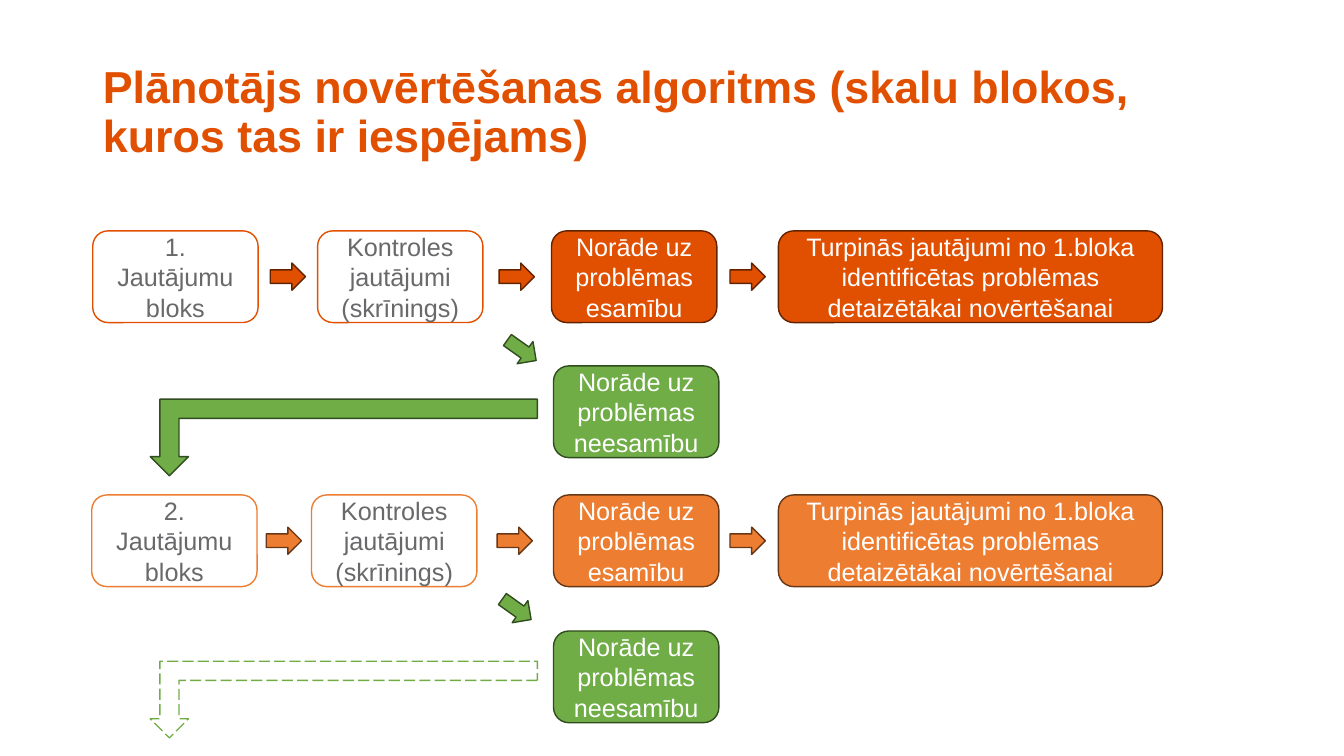
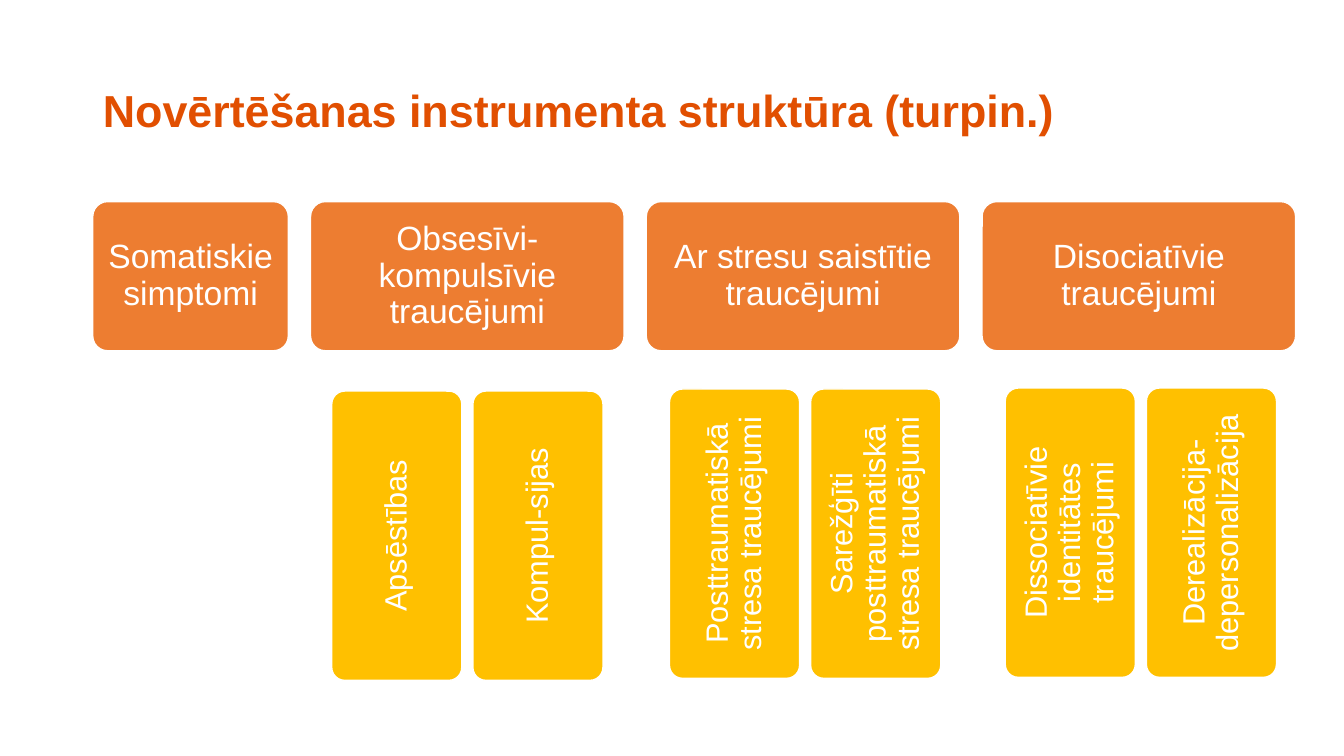
"""Build two slides on the assessment algorithm and the structure of its instrument."""
from pptx import Presentation
from pptx.dml.color import RGBColor
from pptx.enum.dml import MSO_LINE
from pptx.enum.shapes import MSO_SHAPE as Kind
from pptx.enum.text import MSO_ANCHOR as Anchor, MSO_AUTO_SIZE as Fit, PP_ALIGN as Align
from pptx.util import Inches, Pt

RED, ORANGE, GREEN, GOLD = "E14F01", "ED7D31", "70AD47", "FFC000"
WHITE, GREY = "FFFFFF", "69696B"
EDGES = {RED: "632300", ORANGE: "683715", GREEN: "314C1F"}
FACE = "Arial"

FLOW_TITLE = "Plānotājs novērtēšanas algoritms (skalu blokos, kuros tas ir iespējams)"
CHECK = "Kontroles jautājumi (skrīnings)"
FOUND = "Norāde uz problēmas esamību"
CLEAR = "Norāde uz problēmas neesamību"
NEXT = "Turpinās jautājumi no 1.bloka identificētas problēmas detaizētākai novērtēšanai"
FLOWS = [
    dict(top=2.29, hue=RED, first="1. Jautājumu bloks", boxes=(0.92, 3.15, 5.47, 7.72),
         arrows=(2.68, 4.95, 7.24), side=(5, 3.34), back=3.96, clear=3.63, open=False),
    dict(top=4.91, hue=ORANGE, first="2. Jautājumu bloks", boxes=(0.91, 3.09, 5.49, 7.72),
         arrows=(2.64, 4.93, 7.24), side=(4.95, 5.91), back=6.56, clear=6.26, open=True),
]
BOX_W, WIDE_W, BOX_H = 1.64, 3.81, 0.91
ARROW_W, ARROW_H, ARROW_DROP = 0.35, 0.27, 0.32

TREE_TITLE = "Novērtēšanas instrumenta struktūra (turpin.)"
GROUPS = [
    ("Somatiskie simptomi", 1.94, 0, 0, []),
    ("Obsesīvi-kompulsīvie traucējumi", 3.11, 0.21, 3.88, ["Apsēstības", "Kompul-sijas"]),
    ("Ar stresu saistītie traucējumi", 3.11, 0.23, 3.86,
     ["Posttraumatiskā stresa traucējumi", "Sarežģīti posttraumatiskā stresa traucējumi"]),
    ("Disociatīvie traucējumi", 3.11, 0.23, 3.85,
     ["Dissociatīvie identitātes traucējumi", "Derealizācija-depersonalizācija"]),
]
LEFT, HEAD_TOP, HEAD_H, HEAD_GAP = 0.92, 2, 1.48, 0.22
LEAF_W, LEAF_H, LEAF_STEP = 1.29, 2.87, 1.4


def color(code):
    """Turn a hex string into a colour."""
    return RGBColor.from_string(code)


def apply(item, **values):
    """Set every given attribute on an object."""
    for name, value in values.items():
        setattr(item, name, value)


def write(shape, text, size, hue, align=Align.CENTER, bold=False, lead=1.0, pad=None):
    """Put one formatted paragraph in a shape."""
    frame = shape.text_frame
    apply(frame, text=text, word_wrap=True, auto_size=Fit.NONE, vertical_anchor=Anchor.MIDDLE)
    if pad is not None:
        for side in ("left", "top", "right", "bottom"):
            setattr(frame, f"margin_{side}", Inches(pad))
    para = frame.paragraphs[0]
    apply(para, alignment=align, line_spacing=lead)
    apply(para.font, name=FACE, size=Pt(size), bold=bold)
    para.font.color.rgb = color(hue)


def draw(slide, kind, at, fill, edge, turn=0):
    """Add a flat preset shape."""
    shape = slide.shapes.add_shape(kind, *map(Inches, at))
    shape.shadow.inherit = False
    shape.fill.solid()
    shape.fill.fore_color.rgb = color(fill)
    shape.line.color.rgb = color(edge)
    apply(shape.line, width=Pt(1))
    apply(shape, rotation=turn)
    return shape


def start(deck, text, width):
    """Add a title-only slide and set its title."""
    slide = deck.slides.add_slide(deck.slide_layouts[5])
    title = slide.shapes.title
    apply(title, left=Inches(0.92), top=Inches(0.4), width=Inches(width), height=Inches(1.45))
    write(title, text, 32, RED, Align.LEFT, True, 0.9)
    return slide


def draw_flow(slide, flow):
    """Draw one question block with its two outcomes."""
    hue, top = flow["hue"], flow["top"]
    edge = EDGES[hue]
    steps = [
        (flow["first"], BOX_W, WHITE, hue, GREY),
        (CHECK, BOX_W, WHITE, hue, GREY),
        (FOUND, BOX_W, hue, edge, WHITE),
        (NEXT, WIDE_W, hue, edge, WHITE),
    ]
    spots = [(left, top) for left in flow["boxes"]] + [(5.49, flow["clear"])]
    steps.append((CLEAR, BOX_W, GREEN, EDGES[GREEN], WHITE))
    for (text, width, fill, line, ink), spot in zip(steps, spots):
        write(draw(slide, Kind.ROUNDED_RECTANGLE, (*spot, width, BOX_H), fill, line), text, 18, ink)
    for left in flow["arrows"]:
        draw(slide, Kind.RIGHT_ARROW, (left, top + ARROW_DROP, ARROW_W, ARROW_H), hue, edge)
    draw(slide, Kind.RIGHT_ARROW, (*flow["side"], ARROW_W, ARROW_H), GREEN, EDGES[GREEN], 35.4)
    fill, line = (WHITE, GREEN) if flow["open"] else (GREEN, EDGES[GREEN])
    back = draw(slide, Kind.BENT_UP_ARROW, (1.49, flow["back"], 3.84, 0.76), fill, line, 180)
    if flow["open"]:
        back.line.dash_style = MSO_LINE.LONG_DASH


def draw_card(slide, at, text, fill, size, pad):
    """Draw a card with slightly rounded corners."""
    card = draw(slide, Kind.ROUNDED_RECTANGLE, at, fill, WHITE)
    card.adjustments[0] = 0.1
    write(card, text, size, WHITE, lead=0.9, pad=pad)
    return card


def draw_tree(slide):
    """Draw the group heads and the upright leaves below them."""
    left = LEFT
    for head, width, inset, top, leaves in GROUPS:
        draw_card(slide, (left, HEAD_TOP, width, HEAD_H), head, ORANGE, 24, 0.1)
        for i, leaf in enumerate(leaves):
            at = (left + inset + i * LEAF_STEP, top, LEAF_W, LEAF_H)
            card = draw_card(slide, at, leaf, GOLD, 22, 0.09)
            card.element.txBody.bodyPr.set("vert", "vert270")
        left += width + HEAD_GAP


def main():
    """Build and save the deck."""
    deck = Presentation()
    apply(deck, slide_width=Inches(13.33), slide_height=Inches(7.5))
    slide = start(deck, FLOW_TITLE, 11.5)
    for flow in FLOWS:
        draw_flow(slide, flow)
    draw_tree(start(deck, TREE_TITLE, 9.67))
    deck.save("out.pptx")


if __name__ == "__main__":
    main()
